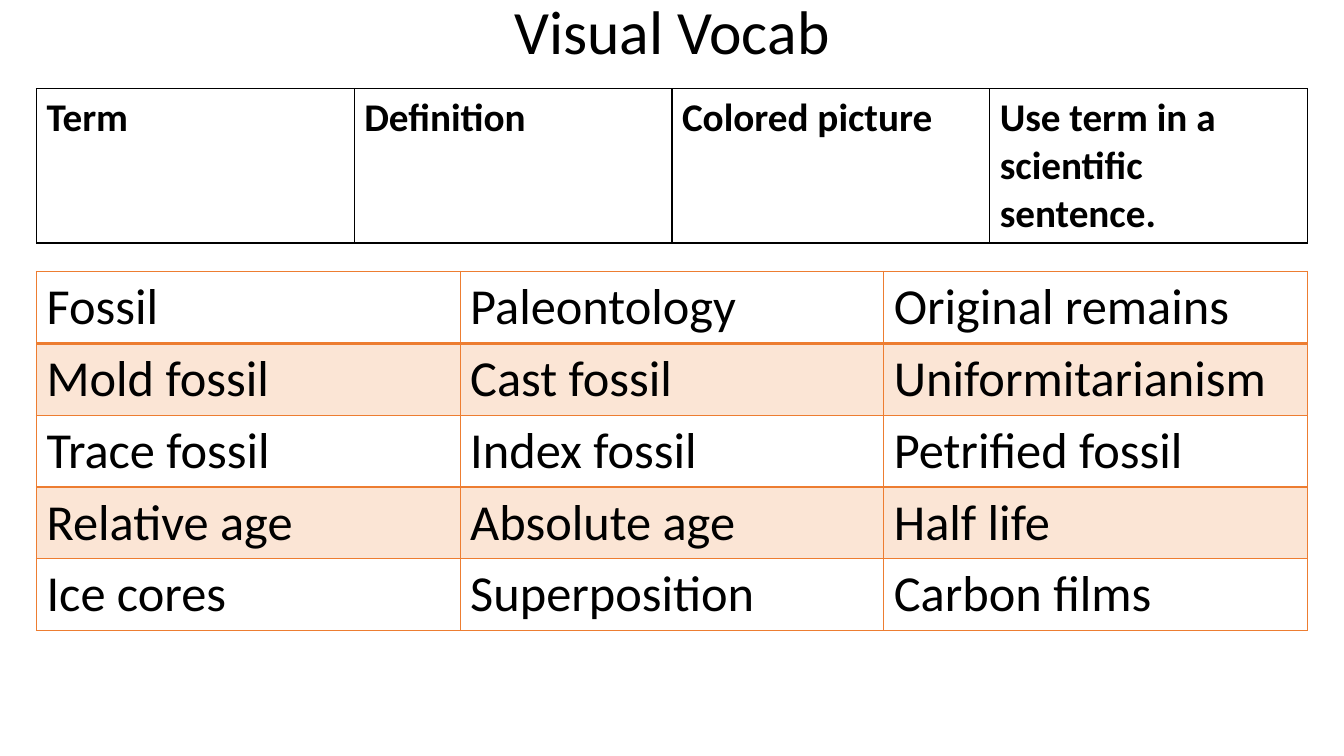
from lxml import etree
from pptx import Presentation
from pptx.dml.color import RGBColor
from pptx.enum.text import MSO_ANCHOR, PP_ALIGN
from pptx.oxml.ns import qn
from pptx.util import Cm, Pt

CENTER = PP_ALIGN.CENTER
MIDDLE = MSO_ANCHOR.MIDDLE
BLACK, ORANGE = "000000", "ED7D31"
LEFT, WIDTH = 0.92, 32.03  # both tables, in cm

HEADINGS = [["Term", "Definition", "Colored picture",
             "Use term in a scientific sentence."]]
TERMS = [
    ["Fossil", "Paleontology", "Original remains"],
    ["Mold fossil", "Cast fossil", "Uniformitarianism"],
    ["Trace fossil", "Index fossil", "Petrified fossil"],
    ["Relative age", "Absolute age", "Half life"],
    ["Ice cores", "Superposition", "Carbon films"],
]


def color(value):
    return RGBColor.from_string(value)


class SlideBuilder:
    font = "Calibri"

    def __init__(self, slide):
        self.s = slide

    def add_text(self, tf, text, size, bold=False):
        p = tf.paragraphs[0]
        r = p.add_run()
        r.text = text
        style = {"name": self.font, "size": Pt(size), "bold": bold}
        for name, value in style.items():
            setattr(r.font, name, value)
        r.font.color.rgb = color(BLACK)
        return p

    def title(self, text, x, y, w, h, size):
        tf = self.s.shapes.add_textbox(Cm(x), Cm(y), Cm(w), Cm(h)).text_frame
        tf.word_wrap = True
        tf.vertical_anchor = MIDDLE
        p = self.add_text(tf, text, size)
        for name, value in {"alignment": CENTER, "line_spacing": 0.9}.items():
            setattr(p, name, value)

    def border(self, cell, side, line_color, width):
        tc_pr = cell._tc.get_or_add_tcPr()
        ln = etree.SubElement(tc_pr, qn(f"a:ln{side}"), w=str(Pt(width)))
        fill = etree.SubElement(ln, qn("a:solidFill"))
        etree.SubElement(fill, qn("a:srgbClr"), val=line_color)

    def tint(self, cell, fill_color, percent):
        cell.fill.solid()
        cell.fill.fore_color.rgb = color(fill_color)
        rgb = cell._tc.tcPr.find(qn("a:solidFill") + "/" + qn("a:srgbClr"))
        etree.SubElement(rgb, qn("a:alpha"), val=str(percent * 1000))

    def table(self, rows, y, row_height, size, line_color, bold=False, banded=False):
        shape = self.s.shapes.add_table(
            len(rows), len(rows[0]), Cm(LEFT), Cm(y),
            Cm(WIDTH), Cm(row_height * len(rows)))
        table = shape.table
        table.first_row = table.horz_banding = False
        for i, row in enumerate(rows):
            # The line under the first row is heavier
            widths = {"L": 1, "R": 1, "T": 2 if i == 1 else 1, "B": 2 if i == 0 else 1}
            for j, text in enumerate(row):
                cell = table.cell(i, j)
                self.add_text(cell.text_frame, text, size, bold)
                for side, width in widths.items():
                    self.border(cell, side, line_color, width)
                if banded and i % 2:
                    self.tint(cell, line_color, 20)
                else:
                    cell.fill.background()


def main():
    prs = Presentation()
    prs.slide_width, prs.slide_height = Cm(33.87), Cm(19.05)
    slide = SlideBuilder(prs.slides.add_slide(prs.slide_layouts[6]))

    # Title
    slide.title("Visual Vocab", 2.33, -0.5, 29.21, 2.76, 44)

    # Vocabulary terms
    slide.table(TERMS, 6.84, 1.81, 36, ORANGE, banded=True)

    # Column headings
    slide.table(HEADINGS, 2.24, 3.88, 28, BLACK, bold=True)

    prs.save("out.pptx")


if __name__ == "__main__":
    main()
